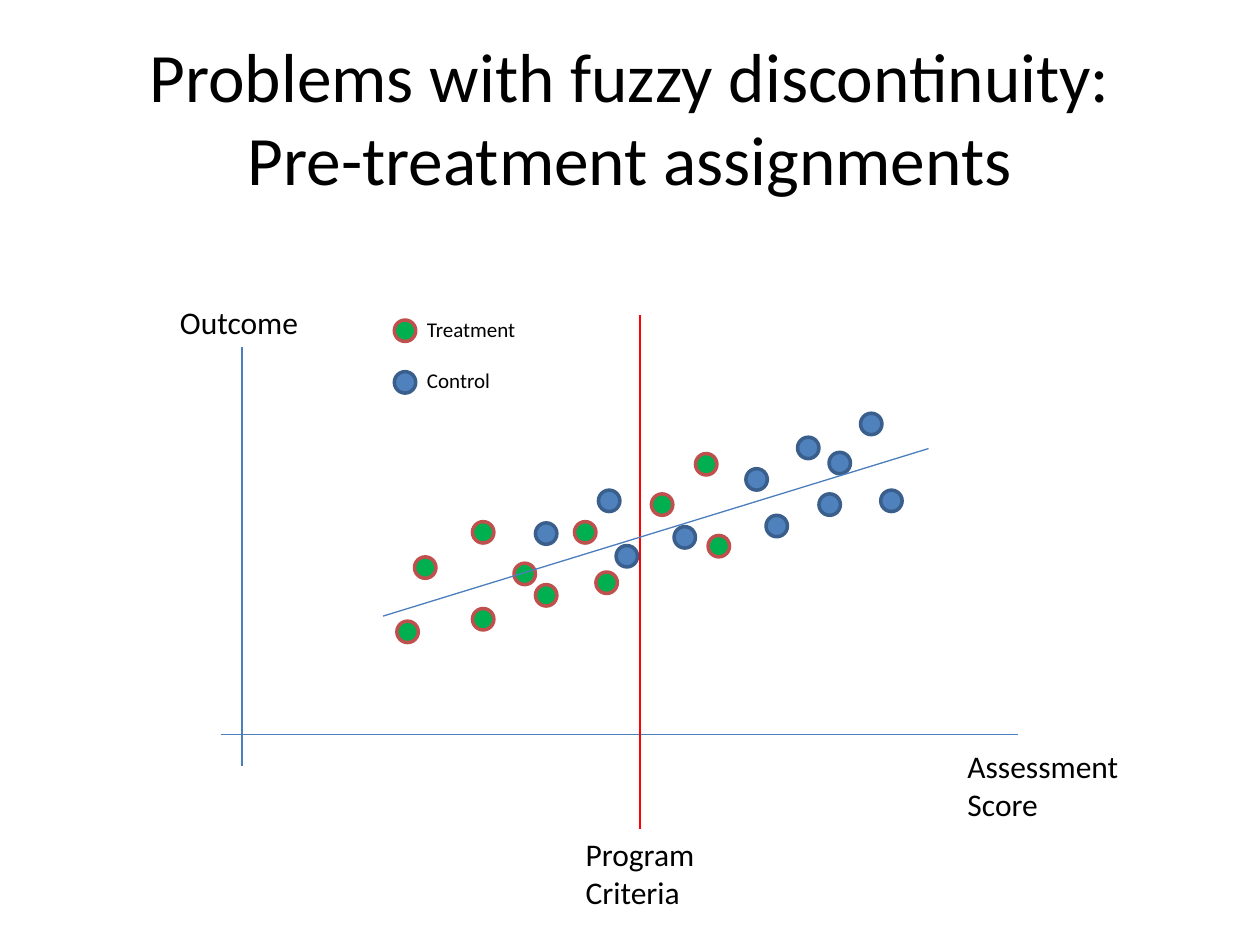
from lxml import etree
from pptx import Presentation
from pptx.dml.color import RGBColor
from pptx.enum.shapes import MSO_CONNECTOR, MSO_SHAPE
from pptx.enum.text import MSO_ANCHOR, PP_ALIGN
from pptx.oxml.ns import qn
from pptx.util import Inches, Pt

STRAIGHT = MSO_CONNECTOR.STRAIGHT
OVAL = MSO_SHAPE.OVAL
LEFT, CENTER = PP_ALIGN.LEFT, PP_ALIGN.CENTER
TOP, MIDDLE = MSO_ANCHOR.TOP, MSO_ANCHOR.MIDDLE

FONT = "Calibri"
DOT_SIZE = 0.17
COLORS = {
    "text": "000000",
    "axis": "4B7EBC",
    "cutoff": "FF0000",
    "treatment": "00B050",
    "treatment edge": "C0504D",
    "control": "4F81BD",
    "control edge": "3A5F8C",
}

TITLE = "Problems with fuzzy discontinuity:\nPre-treatment assignments"
TITLE_AREA = (0.5, 0.3, 9, 1.25)

# start, end, colour
AXES_AND_CUTOFF = [
    ((1.92, 2.75), (1.92, 6.08), "axis"),
    ((1.75, 5.83), (8.08, 5.83), "axis"),
    ((5.08, 2.5), (5.08, 6.58), "cutoff"),
]
TREND = ((3.04, 4.89), (7.37, 3.56), "axis")

# text, (left, top, width, height)
LABELS = [
    ("Program\nCriteria", (4.55, 6.58, 1.07, 0.71)),
    ("Outcome", (1.33, 2.36, 1.15, 0.4)),
    ("Assessment\nScore", (7.58, 5.88, 1.41, 0.71)),
]

# left and top of each dot
OBSERVATIONS = {
    "control": [
        (4.75, 3.89), (4.25, 4.15), (4.89, 4.33), (5.35, 4.18),
        (5.92, 3.72), (6.08, 4.09), (6.33, 3.47), (6.5, 3.92),
        (6.58, 3.59), (6.83, 3.28), (6.99, 3.89),
    ],
    "treatment": [
        (3.15, 4.93), (3.29, 4.42), (3.75, 4.14), (3.75, 4.83),
        (4.08, 4.47), (4.25, 4.64), (4.73, 4.54), (4.56, 4.14),
        (5.17, 3.92), (5.62, 4.25), (5.52, 3.6),
    ],
}

# group, text, text width
LEGEND = [("treatment", "Treatment", 0.91), ("control", "Control", 0.71)]
LEGEND_LEFT, LEGEND_TOP, LEGEND_STEP = 3.13, 2.54, 0.41


def color(name):
    return RGBColor.from_string(COLORS[name])


def add_text(slide, text, area, size=18, align=LEFT, anchor=TOP, wrap=False):
    box = slide.shapes.add_textbox(*map(Inches, area))
    frame = box.text_frame
    frame.word_wrap = wrap
    frame.vertical_anchor = anchor
    para = frame.paragraphs[0]
    para.text = text
    para.alignment = align
    for span in para.runs:
        span.font.name = FONT
        span.font.size = Pt(size)
        span.font.color.rgb = color("text")


def add_line(slide, start, end, color_name):
    line = slide.shapes.add_connector(STRAIGHT, *map(Inches, start + end))
    line.line.color.rgb = color(color_name)
    line.line.width = Pt(0.75)
    etree.SubElement(line.element.spPr, qn("a:effectLst"))


def add_dot(slide, left, top, group):
    dot = slide.shapes.add_shape(OVAL, *map(Inches, (left, top, DOT_SIZE, DOT_SIZE)))
    dot.shadow.inherit = False
    dot.fill.solid()
    dot.fill.fore_color.rgb = color(group)
    dot.line.color.rgb = color(group + " edge")
    dot.line.width = Pt(2)


def main():
    deck = Presentation()
    deck.slide_width, deck.slide_height = Inches(10), Inches(7.5)
    slide = deck.slides.add_slide(deck.slide_layouts[6])

    add_text(slide, TITLE, TITLE_AREA, size=39.6, align=CENTER, anchor=MIDDLE, wrap=True)
    for line in AXES_AND_CUTOFF:
        add_line(slide, *line)
    for text, area in LABELS:
        add_text(slide, text, area)
    for group, positions in OBSERVATIONS.items():
        for left, top in positions:
            add_dot(slide, left, top, group)
    add_line(slide, *TREND)

    for row, (group, text, width) in enumerate(LEGEND):
        top = LEGEND_TOP + row * LEGEND_STEP
        add_dot(slide, LEGEND_LEFT, top, group)
        add_text(slide, text, (LEGEND_LEFT + 0.16, top - 0.08, width, 0.3), size=12)

    deck.save("out.pptx")


if __name__ == "__main__":
    main()
